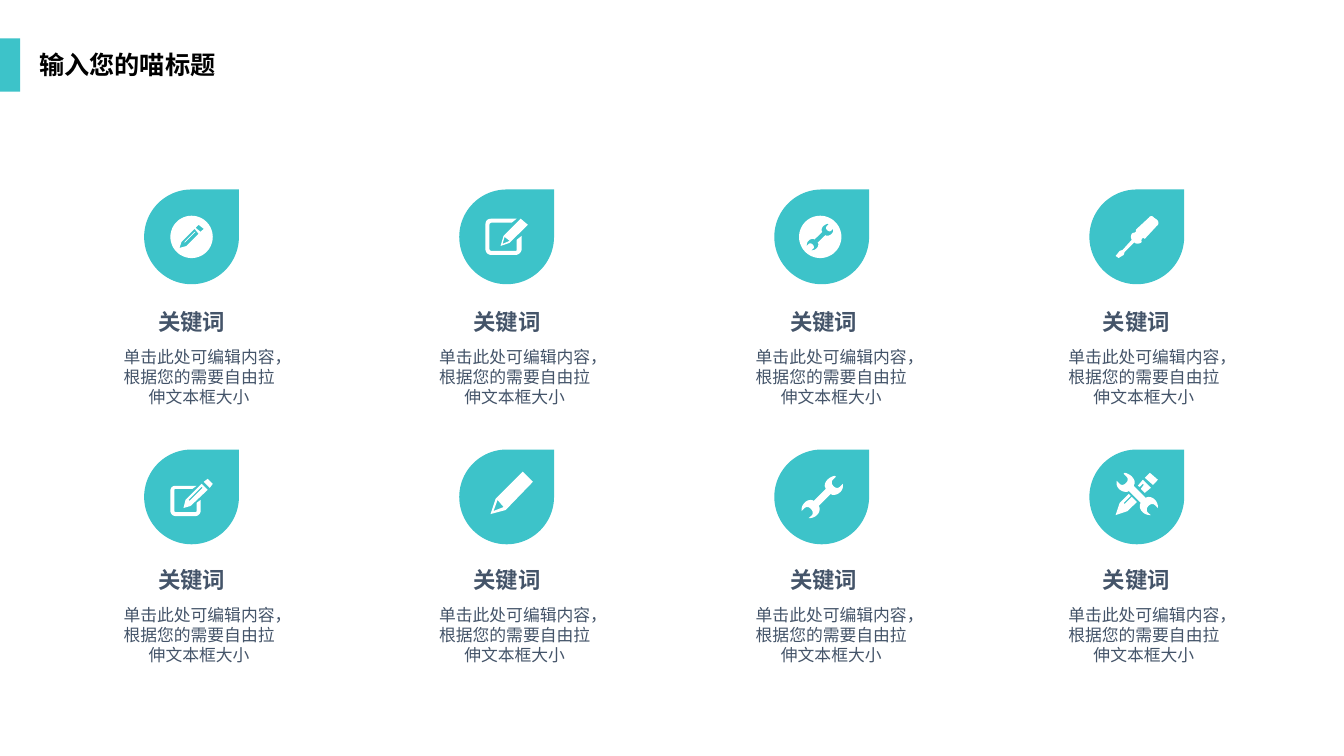
from math import cos, pi, sin

from pptx import Presentation
from pptx import util as u
from pptx.dml.color import RGBColor
from pptx.enum import lang, shapes, text

TEAL = RGBColor(0x3D, 0xC3, 0xC9)
SLATE = RGBColor(0x44, 0x54, 0x69)
WHITE = RGBColor(0xFF, 0xFF, 0xFF)
BLACK = RGBColor(0x00, 0x00, 0x00)


def circle(center_x, center_y, radius, steps=60):
    angles = [2 * pi * step / steps for step in range(steps)]
    return [(center_x + radius * cos(a), center_y + radius * sin(a)) for a in angles]


def outline(*parts, steps=8):
    """Pairs are corners; groups of six are the control points and end of a curve."""
    points = []
    for part in parts:
        if len(part) == 2:
            points.append(part)
            continue
        x0, y0 = points[-1]
        x1, y1, x2, y2, x3, y3 = part
        for step in range(1, steps + 1):
            t = step / steps
            a, b, c, d = (1 - t) ** 3, 3 * t * (1 - t) ** 2, 3 * t * t * (1 - t), t ** 3
            points.append((a * x0 + b * x1 + c * x2 + d * x3,
                           a * y0 + b * y1 + c * y2 + d * y3))
    return points


def placed(points, scale_x, scale_y, shift_x, shift_y):
    return [(x * scale_x + shift_x, y * scale_y + shift_y) for x, y in points]


WRENCH = outline(
    (68, 34), (64, 38, 64, 38, 62, 38), (60, 38, 57, 35, 57, 33), (57, 31, 57, 31, 61, 27),
    (60, 26), (55, 27, 50, 31, 50, 36), (50, 37, 51, 38, 51, 39),
    (39, 51), (38, 50, 37, 50, 36, 50), (31, 50, 27, 55, 27, 60),
    (27, 61), (31, 57, 31, 57, 33, 57), (35, 57, 38, 60, 38, 62), (38, 64, 39, 64, 34, 68),
    (35, 68), (40, 68, 45, 64, 45, 59), (45, 58, 45, 57, 44, 56),
    (56, 44), (57, 45, 58, 45, 59, 45), (64, 45, 69, 40, 68, 35))

PENCIL_BADGE = [
    [[(40, 53), (51, 42), (50, 42), (40, 52)]],
    [circle(47, 47, 21),
     [(42, 56), (35, 58), (37, 52), (50, 39), (54, 44)],
     [(56, 42), (51, 38), (54, 35), (59, 39)]]]

EDIT_LARGE = [
    [outline((57, 59), (57, 60, 57, 61, 56, 61), (32, 61), (31, 61, 30, 60, 30, 59),
             (30, 35), (30, 34, 31, 33, 32, 33), (52, 33), (57, 29),
             (32, 29), (28, 29, 26, 31, 26, 35), (26, 59), (26, 62, 28, 65, 32, 65),
             (56, 65), (59, 65, 62, 62, 62, 59), (62, 46), (57, 50))],
    [[(44, 46), (41, 56), (50, 53), (68, 35), (61, 29)],
     [(50, 51), (43, 54), (45, 47)]]]

WRENCH_BADGE = [[circle(45.5, 47, 21), placed(WRENCH, 0.64, 0.63, 14.8, 17.5)]]

SCREWDRIVER = [[outline(
    (67, 30), (64, 28), (63, 26, 60, 26, 59, 28), (46, 40), (46, 41, 46, 42, 46, 42),
    (45, 43, 44, 43, 43, 43), (42, 44), (41, 46, 41, 48, 42, 50), (33, 60), (30, 61),
    (26, 66), (29, 68), (34, 65), (35, 62), (45, 52), (45, 53), (46, 54, 49, 54, 51, 53),
    (52, 52), (51, 51, 52, 50, 52, 49), (53, 48, 54, 48, 55, 49), (67, 36),
    (69, 35, 69, 32, 67, 30))]]

EDIT_SMALL = [
    [outline((52, 61), (52, 61, 52, 62, 51, 62), (31, 62), (30, 62, 30, 61, 30, 61),
             (30, 41), (30, 40, 30, 39, 31, 39), (48, 39), (52, 36),
             (31, 36), (28, 36, 26, 38, 26, 41), (26, 61), (26, 63, 28, 66, 31, 66),
             (51, 66), (54, 66, 56, 63, 56, 61), (56, 50), (52, 53))],
    [[(63, 40), (57, 34), (41, 50), (39, 58), (46, 56)],
     [(45, 51), (44, 50), (57, 37), (58, 38)]],
    [[(59, 32), (65, 38), (68, 34), (63, 29)]]]

PENCIL = [[[(73, 32), (63, 22), (36, 49), (31, 64), (46, 60)],
           [(34, 61), (38, 50), (44, 57)]]]

PENCIL_AND_WRENCH = [
    [[(42, 47), (35, 54), (34, 53), (41, 46), (39, 44), (30, 53), (26, 65), (38, 61), (47, 52)]],
    [[(50, 37), (53, 34), (54, 35), (51, 39), (55, 43), (61, 38), (53, 30), (48, 36)]],
    [[(60, 23), (55, 28), (63, 35), (68, 30)]],
    [placed(WRENCH, -1, 1, 95, -3)]]

ICON_ROWS = [
    [PENCIL_BADGE, EDIT_LARGE, WRENCH_BADGE, SCREWDRIVER],
    [EDIT_SMALL, PENCIL, [[WRENCH]], PENCIL_AND_WRENCH]]
HEADING_LEFTS = [0.62, 3.75, 6.89, 9.99]
KEYWORD = "关键词"
DESCRIPTION = "单击此处可编辑内容，根据您的需要自由拉伸文本框大小"


class SlideBuilder:
    title_font = "Noto Sans CJK SC"
    body_font = "Arial"

    def __init__(self, slide):
        self.slide = slide

    def paint(self, shape, color):
        shape.shadow.inherit = False
        shape.fill.solid()
        shape.fill.fore_color.rgb = color
        shape.line.fill.background()

    def block(self, kind, left, top, width, height):
        box = [u.Inches(value) for value in (left, top, width, height)]
        self.paint(self.slide.shapes.add_shape(kind, *box), TEAL)

    def icon(self, pieces, left, top):
        for contours in pieces:
            builder = None
            for contour in contours:
                points = [(u.Inches(x / 100), u.Inches(y / 100)) for x, y in contour]
                if builder is None:
                    builder = self.slide.shapes.build_freeform(*points[0])
                else:
                    builder.move_to(*points[0])
                builder.add_line_segments(points[1:], close=True)
            self.paint(builder.convert_to_shape(u.Inches(left), u.Inches(top)), WHITE)

    def label(self, words, left, top, width, height, size, color, font, bold=False):
        box = [u.Inches(value) for value in (left, top, width, height)]
        frame = self.slide.shapes.add_textbox(*box).text_frame
        frame.word_wrap = True
        frame.auto_size = text.MSO_AUTO_SIZE.SHAPE_TO_FIT_TEXT
        run = frame.paragraphs[0].add_run()
        run.text = words
        run.font.name = font
        run.font.size = u.Pt(size)
        run.font.bold = bold
        run.font.color.rgb = color
        run.font.language_id = lang.MSO_LANGUAGE_ID.SIMPLIFIED_CHINESE
        return frame

    def caption(self, *args, **options):
        frame = self.label(*args, SLATE, self.body_font, **options)
        frame.margin_left = frame.margin_right = frame.margin_top = frame.margin_bottom = 0
        frame.paragraphs[0].alignment = text.PP_ALIGN.CENTER


def main():
    presentation = Presentation()
    presentation.slide_width = u.Inches(13.33)
    presentation.slide_height = u.Inches(7.5)
    builder = SlideBuilder(presentation.slides.add_slide(presentation.slide_layouts[6]))

    builder.block(shapes.MSO_SHAPE.RECTANGLE, 0, 0.38, 0.2, 0.53)
    builder.label("输入您的喵标题", 0.29, 0.44, 2.3, 0.4, 18, BLACK, builder.title_font, bold=True)

    for row, icons in enumerate(ICON_ROWS):
        drop_top = 1.88 + 2.58 * row
        heading_top = 3.06 + 2.56 * row
        for column, (icon, heading_left) in enumerate(zip(icons, HEADING_LEFTS)):
            drop_left = 1.43 + 3.125 * column
            builder.block(shapes.MSO_SHAPE.TEAR, drop_left, drop_top, 0.94, 0.94)
            builder.icon(icon, drop_left, drop_top)
            builder.caption(KEYWORD, heading_left, heading_top, 2.56, 0.27, 16, bold=True)
            builder.caption(DESCRIPTION, heading_left + 0.6, heading_top + 0.38, 1.51, 0.61, 12)

    presentation.save("out.pptx")


if __name__ == "__main__":
    main()
